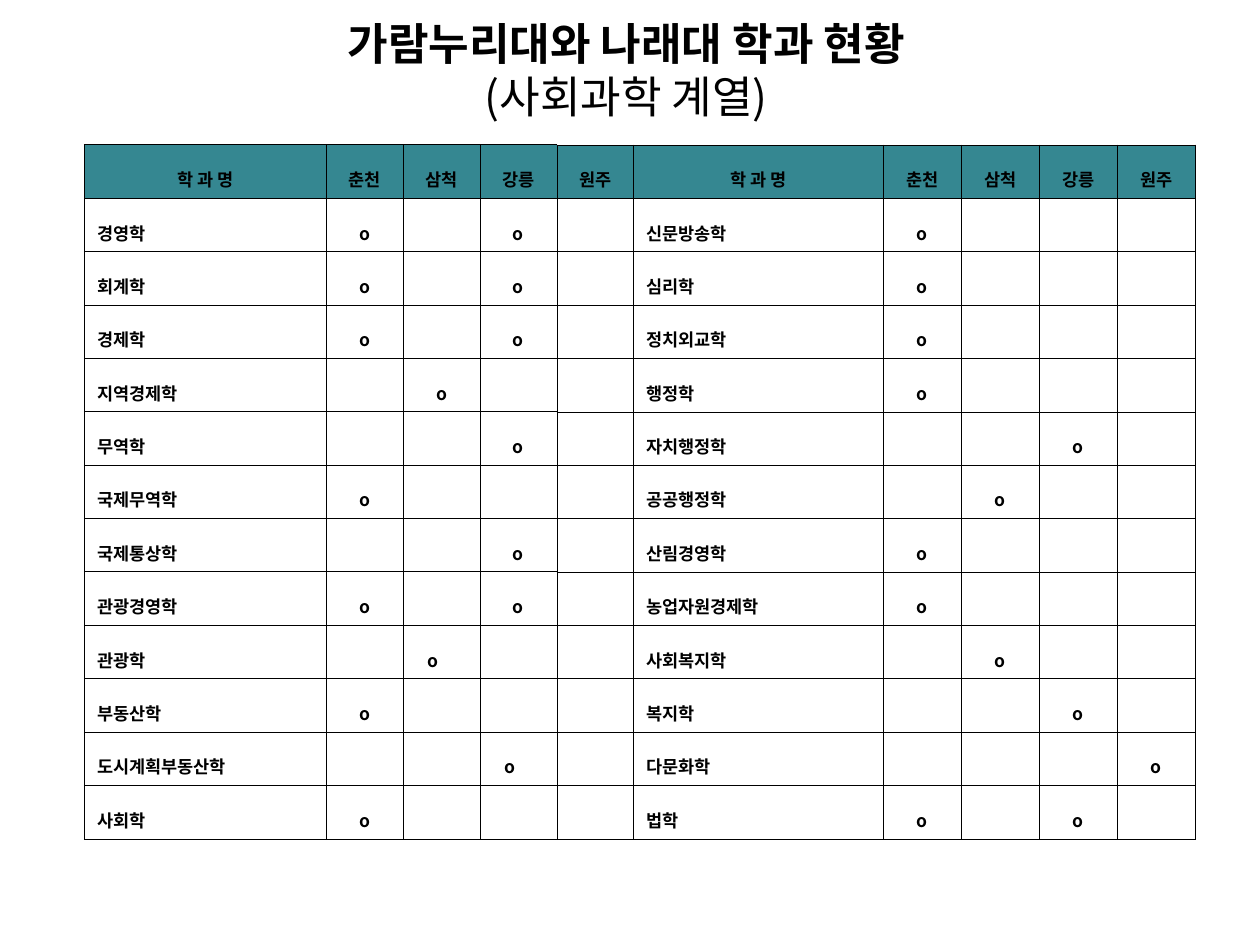
from dataclasses import dataclass

from lxml import etree
from pptx import Presentation
from pptx.dml.color import RGBColor
from pptx.enum.text import MSO_ANCHOR, MSO_AUTO_SIZE, PP_ALIGN
from pptx.oxml.ns import qn
from pptx.util import Inches, Pt

LEFT, CENTER, JUSTIFY = PP_ALIGN.LEFT, PP_ALIGN.CENTER, PP_ALIGN.JUSTIFY
MIDDLE = MSO_ANCHOR.MIDDLE
NO_AUTOFIT = MSO_AUTO_SIZE.NONE


@dataclass(frozen=True)
class Theme:
    font: str = "Noto Sans CJK KR"
    ink: str = "000000"
    header: str = "358791"
    title_size: float = 25.2
    cell_size: float = 10
    thin: float = 0.28
    thick: float = 0.56


THEME = Theme()
CAMPUSES = ["춘천", "삼척", "강릉", "원주"]
HEADER = ["학 과 명", *CAMPUSES]
GROUP_SIZE = len(HEADER)
COLUMN_WIDTHS = [1.92] + [0.61] * 4 + [1.98] + [0.62] * 4
TABLE_HEIGHT = 5.51

LEFT_DEPARTMENTS = [
    ("경영학", {"춘천": "o", "강릉": "o"}),
    ("회계학", {"춘천": "o", "강릉": "o"}),
    ("경제학", {"춘천": "o", "강릉": "o"}),
    ("지역경제학", {"삼척": "o"}),
    ("무역학", {"강릉": "o"}),
    ("국제무역학", {"춘천": "o"}),
    ("국제통상학", {"강릉": "o"}),
    ("관광경영학", {"춘천": "o", "강릉": "o"}),
    ("관광학", {"삼척": "o　"}),
    ("부동산학", {"춘천": "o"}),
    ("도시계획부동산학", {"강릉": "o　"}),
    ("사회학", {"춘천": "o"}),
]
RIGHT_DEPARTMENTS = [
    ("신문방송학", {"춘천": "o"}),
    ("심리학", {"춘천": "o"}),
    ("정치외교학", {"춘천": "o"}),
    ("행정학", {"춘천": "o"}),
    ("자치행정학", {"강릉": "o"}),
    ("공공행정학", {"삼척": "o"}),
    ("산림경영학", {"춘천": "o"}),
    ("농업자원경제학", {"춘천": "o"}),
    ("사회복지학", {"삼척": "o"}),
    ("복지학", {"강릉": "o"}),
    ("다문화학", {"원주": "o"}),
    ("법학", {"춘천": "o", "강릉": "o"}),
]


def style_paragraph(paragraph, size, align, spacing, bold=None):
    paragraph.alignment = align
    paragraph.line_spacing = spacing
    font = paragraph.font
    font.size = Pt(size)
    font.bold = bold
    font.color.rgb = RGBColor.from_string(THEME.ink)
    font.name = THEME.font
    defaults = paragraph._p.pPr.find(qn("a:defRPr"))
    etree.SubElement(defaults, qn("a:ea"), typeface=THEME.font)


def add_title(slide, heading, subheading):
    title = slide.shapes.title
    title.left, title.top = Inches(0.22), Inches(0.08)
    title.width, title.height = Inches(9.5), Inches(0.94)
    frame = title.text_frame
    frame.auto_size = NO_AUTOFIT
    frame.vertical_anchor = MIDDLE
    paragraph = frame.paragraphs[0]
    style_paragraph(paragraph, THEME.title_size, CENTER, 1.0)
    heading_run = paragraph.add_run()
    heading_run.text = heading
    heading_run.font.bold = True
    paragraph.add_line_break()
    subheading_run = paragraph.add_run()
    subheading_run.text = subheading
    subheading_run.font.bold = False


def set_borders(cell, widths):
    properties = cell._tc.get_or_add_tcPr()
    for position, (side, width) in enumerate(widths.items()):
        line = etree.Element(qn(f"a:{side}"), w=str(Pt(width)))
        fill = etree.SubElement(line, qn("a:solidFill"))
        etree.SubElement(fill, qn("a:srgbClr"), val=THEME.ink)
        properties.insert(position, line)


def border_widths(row, column, last_row):
    base = THEME.thick if column < GROUP_SIZE - 1 else THEME.thin
    widths = dict.fromkeys(("lnL", "lnR", "lnT", "lnB"), base)
    if column == GROUP_SIZE - 2:
        widths["lnR"] = THEME.thin
    if row == last_row:
        widths["lnB"] = THEME.thin
    return widths


def cell_alignment(row, column):
    if row == 0 or column % GROUP_SIZE:
        return CENTER
    return LEFT if column == 0 else JUSTIFY


def fill_cell(cell, text, align, is_header):
    cell.text = text
    cell.vertical_anchor = MIDDLE
    cell.margin_left = cell.margin_right = Inches(0.1)
    cell.margin_top = cell.margin_bottom = Inches(0.04)
    style_paragraph(cell.text_frame.paragraphs[0], THEME.cell_size, align, 1.6, True)
    if is_header:
        cell.fill.solid()
        cell.fill.fore_color.rgb = RGBColor.from_string(THEME.header)
    else:
        cell.fill.background()


def department_cells(name, marks):
    return [name] + [marks.get(campus, "") for campus in CAMPUSES]


def add_department_table(slide):
    rows = [HEADER * 2] + [
        department_cells(*left) + department_cells(*right)
        for left, right in zip(LEFT_DEPARTMENTS, RIGHT_DEPARTMENTS)
    ]
    table = slide.shapes.add_table(
        len(rows), len(COLUMN_WIDTHS), Inches(0.67), Inches(1.15),
        Inches(sum(COLUMN_WIDTHS)), Inches(TABLE_HEIGHT),
    ).table
    table.horz_banding = False
    table.first_row = False
    for column, width in zip(table.columns, COLUMN_WIDTHS):
        column.width = Inches(width)
    for r, texts in enumerate(rows):
        table.rows[r].height = Inches(TABLE_HEIGHT / len(rows))
        for c, text in enumerate(texts):
            cell = table.cell(r, c)
            fill_cell(cell, text, cell_alignment(r, c), r == 0)
            set_borders(cell, border_widths(r, c, len(rows) - 1))


def main():
    presentation = Presentation()
    presentation.slide_width, presentation.slide_height = Inches(10), Inches(7.5)
    slide = presentation.slides.add_slide(presentation.slide_layouts[5])
    add_title(slide, "가람누리대와 나래대 학과 현황", "(사회과학 계열)")
    add_department_table(slide)
    presentation.save("out.pptx")


if __name__ == "__main__":
    main()
